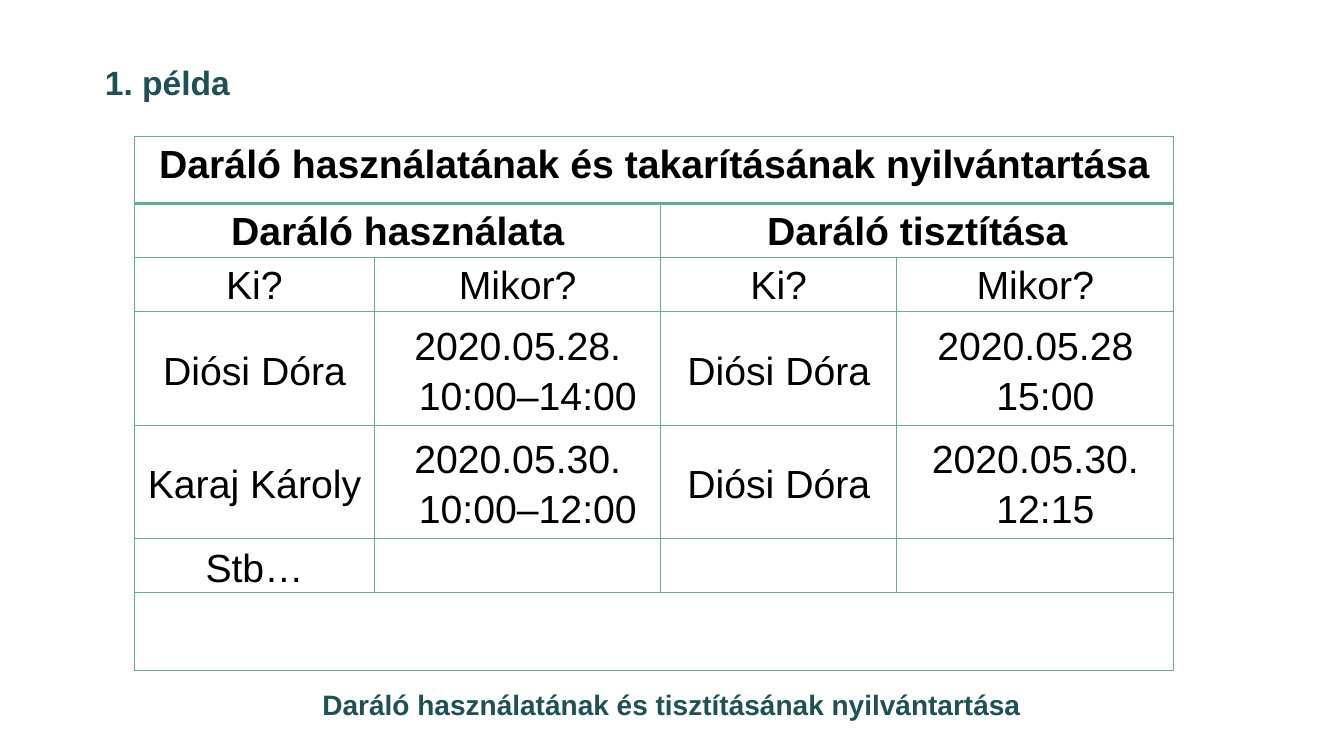
from dataclasses import dataclass

from lxml import etree
from pptx import Presentation
from pptx.dml.color import RGBColor
from pptx.enum.text import MSO_ANCHOR, MSO_AUTO_SIZE, PP_ALIGN
from pptx.oxml.ns import qn
from pptx.util import Pt

LEFT, CENTER = PP_ALIGN.LEFT, PP_ALIGN.CENTER
TOP, MIDDLE = MSO_ANCHOR.TOP, MSO_ANCHOR.MIDDLE
FIT_SHAPE = MSO_AUTO_SIZE.SHAPE_TO_FIT_TEXT


@dataclass(frozen=True)
class Theme:
    font: str = "Arial"
    heading: str = "1E5155"
    body: str = "000000"
    border: str = "6AAC90"
    title_size: int = 24
    table_size: int = 28
    caption_size: int = 20


THEME = Theme()


def add_run(paragraph, text, size, color, bold):
    run = paragraph.add_run()
    run.text = text
    run.font.name = THEME.font
    run.font.size = Pt(size)
    run.font.bold = bold
    run.font.color.rgb = RGBColor.from_string(color)


def set_borders(cell, top, bottom):
    """Draw all four cell borders; top and bottom are widths in points."""
    properties = cell._tc.get_or_add_tcPr()
    widths = {"lnL": 1, "lnR": 1, "lnT": top, "lnB": bottom}
    for position, (side, width) in enumerate(widths.items()):
        line = etree.Element(qn(f"a:{side}"), w=str(Pt(width)))
        fill = etree.SubElement(line, qn("a:solidFill"))
        etree.SubElement(fill, qn("a:srgbClr"), val=THEME.border)
        properties.insert(position, line)


presentation = Presentation()
presentation.slide_width = Pt(960)
presentation.slide_height = Pt(540)
slide = presentation.slides.add_slide(presentation.slide_layouts[5])

# Title and caption
title = slide.shapes.title
title.left, title.top, title.width, title.height = Pt(67.7), Pt(40.3), Pt(104.4), Pt(36)
caption = slide.shapes.add_textbox(Pt(223.2), Pt(487.4), Pt(517), Pt(31.7))
headings = [
    (title, "1. példa", THEME.title_size),
    (caption, "Daráló használatának és tisztításának nyilvántartása", THEME.caption_size),
]
for shape, text, size in headings:
    frame = shape.text_frame
    frame.word_wrap = False
    frame.auto_size = FIT_SHAPE
    frame.vertical_anchor = TOP
    paragraph = frame.paragraphs[0]
    paragraph.alignment = LEFT
    add_run(paragraph, text, size, THEME.heading, True)

# Register of grinder use and cleaning
column_widths = [171.5, 204.5, 168.5, 198]
row_heights = [48, 38.5, 38.5, 81, 81, 38.5, 55.5]
register_rows = [
    ["Daráló használatának és takarításának nyilvántartása", "", "", ""],
    ["Daráló használata", "", "Daráló tisztítása", ""],
    ["Ki?", "Mikor?", "Ki?", "Mikor?"],
    ["Diósi Dóra", "2020.05.28. 10:00–14:00", "Diósi Dóra", "2020.05.28 15:00"],
    ["Karaj Károly", "2020.05.30. 10:00–12:00", "Diósi Dóra", "2020.05.30. 12:15"],
    ["Stb…", "", "", ""],
    ["", "", "", ""],
]
merges = [(0, 0, 3), (1, 0, 1), (1, 2, 3), (6, 0, 3)]
header_rows = 2
first_entry_row = 3

table = slide.shapes.add_table(
    len(row_heights), len(column_widths),
    Pt(96), Pt(97.4), Pt(sum(column_widths)), Pt(sum(row_heights)),
).table
table.first_row = False
table.horz_banding = False
for column, width in zip(table.columns, column_widths):
    column.width = Pt(width)
for row, height in zip(table.rows, row_heights):
    row.height = Pt(height)
for row_index, first, last in merges:
    table.cell(row_index, first).merge(table.cell(row_index, last))

for row_index, texts in enumerate(register_rows):
    for column_index, text in enumerate(texts):
        cell = table.cell(row_index, column_index)
        cell.fill.background()
        set_borders(cell, 2 if row_index == 1 else 1, 2 if row_index == 0 else 1)
        if not text:
            continue
        cell.margin_left = cell.margin_right = Pt(5)
        cell.margin_top = cell.margin_bottom = Pt(0)
        cell.vertical_anchor = MIDDLE if row_index >= first_entry_row else TOP
        paragraph = cell.text_frame.paragraphs[0]
        paragraph.alignment = CENTER
        paragraph.line_spacing = 1.15
        paragraph.space_after = Pt(6)
        properties = paragraph._p.get_or_add_pPr()
        properties.set("marL", str(Pt(14.4)))
        properties.set("indent", str(Pt(-14.4)))
        add_run(paragraph, text, THEME.table_size, THEME.body, row_index < header_rows)

presentation.save("out.pptx")
